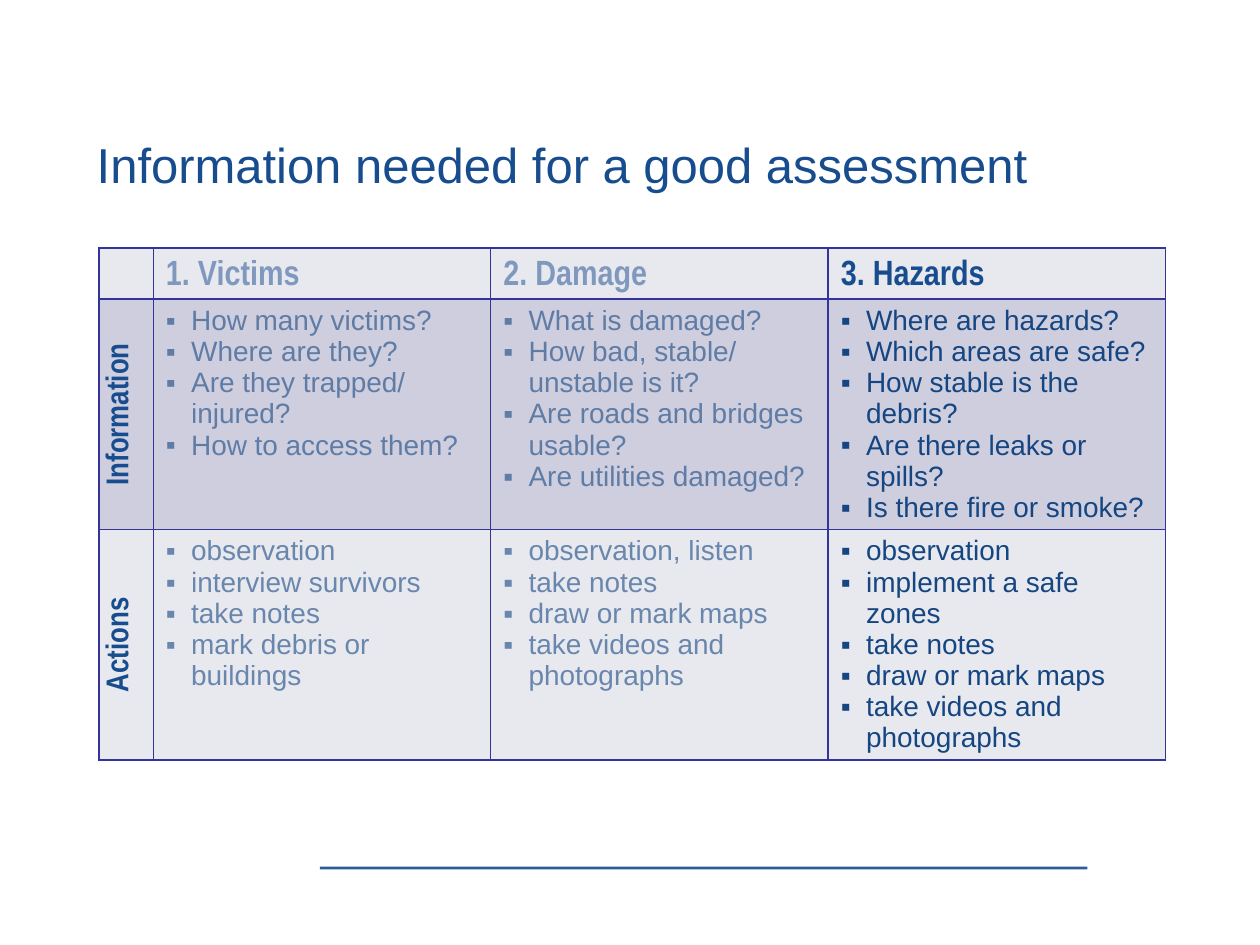
import dataclasses

import pptx
import pptx.dml.color
import pptx.enum.shapes
import pptx.enum.text
import pptx.oxml
import pptx.oxml.ns
import pptx.util

Cm = pptx.util.Cm
Pt = pptx.util.Pt
Anchor = pptx.enum.text.MSO_ANCHOR
Align = pptx.enum.text.PP_ALIGN


@dataclasses.dataclass(frozen=True)
class Theme:
    blue: str = "174C8E"
    ink: str = "154681"
    edge: str = "333399"
    pale: str = "E8E8EF"
    deep: str = "CECEDE"
    sans: str = "Arial"
    narrow: str = "Arial Narrow"
    title: int = 28
    head: int = 20
    side: int = 18
    body: int = 16
    dim_head: int = 50
    dim_body: int = 60


THEME = Theme()

TITLE = "Information needed for a good assessment"
HEADS = ["1. Victims", "2. Damage", "3. Hazards"]
ACTIVE = 2  # the topic shown at full strength
ROWS = [
    ("Information", THEME.deep, [
        ["How many victims?", "Where are they?", "Are they trapped/ injured?",
         "How to access them?"],
        ["What is damaged?", "How bad, stable/ unstable is it?",
         "Are roads and bridges usable?", "Are utilities damaged?"],
        ["Where are hazards?", "Which areas are safe?", "How stable is the debris?",
         "Are there leaks or spills?", "Is there fire or smoke?"],
    ]),
    ("Actions", THEME.pale, [
        ["observation", "interview survivors", "take notes",
         "mark debris or buildings"],
        ["observation, listen", "take notes", "draw or mark maps",
         "take videos and photographs"],
        ["observation", "implement a safe zones", "take notes",
         "draw or mark maps", "take videos and photographs"],
    ]),
]


def rgb(code):
    return pptx.dml.color.RGBColor.from_string(code)


def add(parent, tag, **attrs):
    """Append a DrawingML child element."""
    child = pptx.oxml.parse_xml(f"<a:{tag} {pptx.oxml.ns.nsdecls('a')}/>")
    for key, value in attrs.items():
        child.set(key, str(value))
    parent.append(child)
    return child


def fade(fill, alpha):
    """Set the opacity, in percent, of a solid RGB fill element."""
    if alpha < 100:
        add(fill.find(pptx.oxml.ns.qn("a:srgbClr")), "alpha", val=alpha * 1000)


def style(para, face, size, code, bold=False, alpha=100):
    for run in para.runs:
        font = run.font
        font.name, font.size, font.bold = face, Pt(size), bold
        font.color.rgb = rgb(code)
        fade(run._r.rPr.find(pptx.oxml.ns.qn("a:solidFill")), alpha)


def dress(cell, code):
    """Give a cell its borders and fill."""
    props = cell._tc.get_or_add_tcPr()
    for side in "LRTB":
        line = add(props, f"ln{side}", w=Pt(1))
        add(add(line, "solidFill"), "srgbClr", val=THEME.edge)
    cell.fill.solid()
    cell.fill.fore_color.rgb = rgb(code)


def label(cell, text, size, alpha=100):
    cell.text_frame.text = text
    para = cell.text_frame.paragraphs[0]
    style(para, THEME.narrow, size, THEME.blue, True, alpha)
    return para


def bullets(cell, items, alpha):
    frame = cell.text_frame
    frame.text = "\n".join(items)
    for para in frame.paragraphs:
        props = para._p.get_or_add_pPr()
        props.set("marL", str(Cm(0.51)))
        props.set("indent", str(-Cm(0.51)))
        add(props, "buFont", typeface=THEME.sans)
        add(props, "buChar", char="▪")
        style(para, THEME.sans, THEME.body, THEME.ink, alpha=alpha)


def heading(slide, left, top, width, height):
    shape = slide.shapes.title
    shape.left, shape.top, shape.width, shape.height = left, top, width, height
    frame = shape.text_frame
    frame.text = TITLE
    frame.word_wrap = True
    frame.auto_size = pptx.enum.text.MSO_AUTO_SIZE.NONE
    frame.vertical_anchor = Anchor.MIDDLE
    frame.margin_left = frame.margin_right = Cm(0.25)
    frame.margin_top = frame.margin_bottom = Cm(0.15)
    para = frame.paragraphs[0]
    para.alignment = Align.LEFT
    style(para, THEME.sans, THEME.title, THEME.blue)


def matrix(slide, left, top, width, height):
    """Build the table of topics by information and actions."""
    table = slide.shapes.add_table(
        len(ROWS) + 1, len(HEADS) + 1, left, top, width, height).table
    table.first_row = table.horz_banding = False
    side, head = Cm(1.09), Cm(0.76)
    for col, column in enumerate(table.columns):
        column.width = (width - side) // len(HEADS) if col else side
    for num, row in enumerate(table.rows):
        row.height = Cm(4.03) if num else head

    dress(table.cell(0, 0), THEME.pale)
    for col, text in enumerate(HEADS):
        cell = table.cell(0, col + 1)
        dress(cell, THEME.pale)
        cell.vertical_anchor = Anchor.BOTTOM
        label(cell, text, THEME.head, 100 if col == ACTIVE else THEME.dim_head)

    for num, (name, code, lists) in enumerate(ROWS, 1):
        cell = table.cell(num, 0)
        dress(cell, code)
        cell._tc.tcPr.set("vert", "vert270")
        label(cell, name, THEME.side).alignment = Align.CENTER
        for col, items in enumerate(lists):
            cell = table.cell(num, col + 1)
            dress(cell, code)
            bullets(cell, items, 100 if col == ACTIVE else THEME.dim_body)


def footer(slide, left, top, width):
    rule = slide.shapes.add_connector(
        pptx.enum.shapes.MSO_CONNECTOR.STRAIGHT, left, top, left + width, top)
    rule.line.width = Pt(1.6)
    rule.line.color.rgb = rgb(THEME.blue)
    props = rule._element.spPr
    fade(props.find(pptx.oxml.ns.qn("a:ln")).find(pptx.oxml.ns.qn("a:solidFill")), 90)
    add(props, "effectLst")


def main():
    deck = pptx.Presentation()
    deck.slide_width, deck.slide_height = Cm(25.4), Cm(19.05)
    slide = deck.slides.add_slide(deck.slide_layouts[5])
    footer(slide, Cm(6.45), Cm(17.5), Cm(15.47))
    heading(slide, Cm(1.7), Cm(2.49), Cm(23.06), Cm(1.63))
    matrix(slide, Cm(2), Cm(5), Cm(21.5), Cm(8.82))
    deck.save("out.pptx")


if __name__ == "__main__":
    main()
